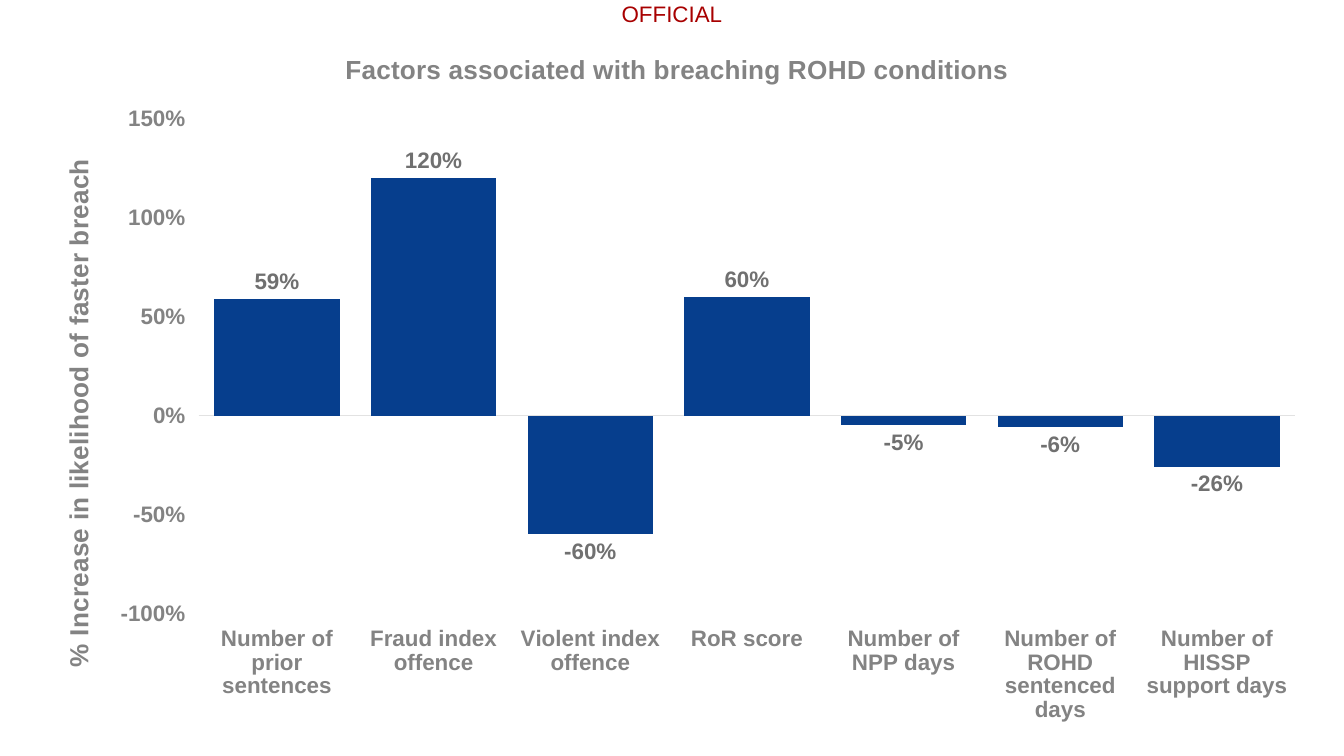
from lxml import etree
from pptx import Presentation, util as u
from pptx.chart.data import CategoryChartData
from pptx.dml.color import RGBColor
from pptx.enum import chart as ch, text
from pptx.oxml.ns import qn

HUES = {"mark": "A80000", "bar": "063E8D", "axis": "838383",
        "label": "707070", "line": "E2E2E2", "body": "404040"}

FACTORS = {
    "Number of prior sentences": 0.59,
    "Fraud index offence": 1.2,
    "Violent index offence": -0.6,
    "RoR score": 0.6,
    "Number of NPP days": -0.05,
    "Number of ROHD sentenced days": -0.06,
    "Number of HISSP support days": -0.26,
}


def put(item, **form):
    for name, value in form.items():
        setattr(item, name, value)


def place(node, index, **form):
    old = node.find(qn("c:layout"))
    if old is not None:
        node.remove(old)
    layout = etree.Element(qn("c:layout"))
    manual = etree.SubElement(layout, qn("c:manualLayout"))
    for name, value in form.items():
        etree.SubElement(manual, qn("c:" + name)).set("val", str(value))
    node.insert(index, layout)


class Deck:
    face = "Arial"

    def __init__(self, wide, high):
        self.show = Presentation()
        put(self.show, slide_width=u.Inches(wide), slide_height=u.Inches(high))
        self.slide = self.show.slides.add_slide(self.show.slide_layouts[6])

    def font(self, font, size, hue, bold=False):
        put(font, name=self.face, size=u.Pt(size), bold=bold)
        font.color.rgb = RGBColor.from_string(HUES[hue])

    def text(self, words, box, size, hue):
        frame = self.slide.shapes.add_textbox(*map(u.Inches, box)).text_frame
        put(frame, margin_left=0, margin_right=0, margin_top=0, margin_bottom=0,
            word_wrap=True, auto_size=text.MSO_AUTO_SIZE.SHAPE_TO_FIT_TEXT)
        para = frame.paragraphs[0]
        para.alignment = text.PP_ALIGN.CENTER
        run = para.add_run()
        run.text = words
        self.font(run.font, size, hue)

    def title(self, owner, words, x, y):
        owner.has_title = True
        title = getattr(owner, "chart_title", None) or owner.axis_title
        run = title.text_frame.paragraphs[0].add_run()
        run.text = words
        self.font(run.font, 14, "axis", True)
        place(title._element, 1, xMode="edge", yMode="edge", x=x, y=y)

    def axis(self, axis):
        put(axis, has_major_gridlines=False,
            major_tick_mark=ch.XL_TICK_MARK.NONE,
            minor_tick_mark=ch.XL_TICK_MARK.NONE,
            tick_label_position=ch.XL_TICK_LABEL_POSITION.LOW)
        self.font(axis.tick_labels.font, 12, "axis", True)

    def chart(self, values, box, head, side):
        data = CategoryChartData(number_format="0%")
        data.categories = list(values)
        data.add_series("Series 1", list(values.values()))
        chart = self.slide.shapes.add_chart(
            ch.XL_CHART_TYPE.COLUMN_CLUSTERED, *map(u.Inches, box), data).chart
        chart.has_legend = False
        self.font(chart.font, 10, "body")
        self.title(chart, head, 0.24, 0.03)

        cat, val = chart.category_axis, chart.value_axis
        self.axis(cat)
        self.axis(val)
        cat.format.line.color.rgb = RGBColor.from_string(HUES["line"])
        cat.format.line.width = u.Pt(0.75)
        val.format.line.fill.background()
        put(val, minimum_scale=-1, maximum_scale=1.5, major_unit=0.5)
        put(val.tick_labels, number_format="0%", number_format_is_linked=False)
        self.title(val, side, 0.02, 0.18)

        plot = chart.plots[0]
        put(plot, gap_width=25, overlap=-27, vary_by_categories=False)
        bars = plot.series[0]
        put(bars.data_labels, show_value=True, number_format="0%",
            number_format_is_linked=False,
            position=ch.XL_LABEL_POSITION.OUTSIDE_END)
        self.font(bars.data_labels.font, 12, "label", True)
        bars.invert_if_negative = False
        bars.format.fill.solid()
        bars.format.fill.fore_color.rgb = RGBColor.from_string(HUES["bar"])
        place(chart._chartSpace.find(".//" + qn("c:plotArea")), 0,
              layoutTarget="inner", xMode="edge", yMode="edge",
              x=0.13, y=0.13, w=0.85, h=0.7)


deck = Deck(10, 10 * 9 / 16)
deck.text("OFFICIAL", (4.6, 0, 0.8, 0.2), 12, "mark")
deck.chart(FACTORS, (0.23, 0.2, 9.6, 5.26),
           "Factors associated with breaching ROHD conditions",
           "% Increase in likelihood of faster breach")
deck.show.save("out.pptx")
